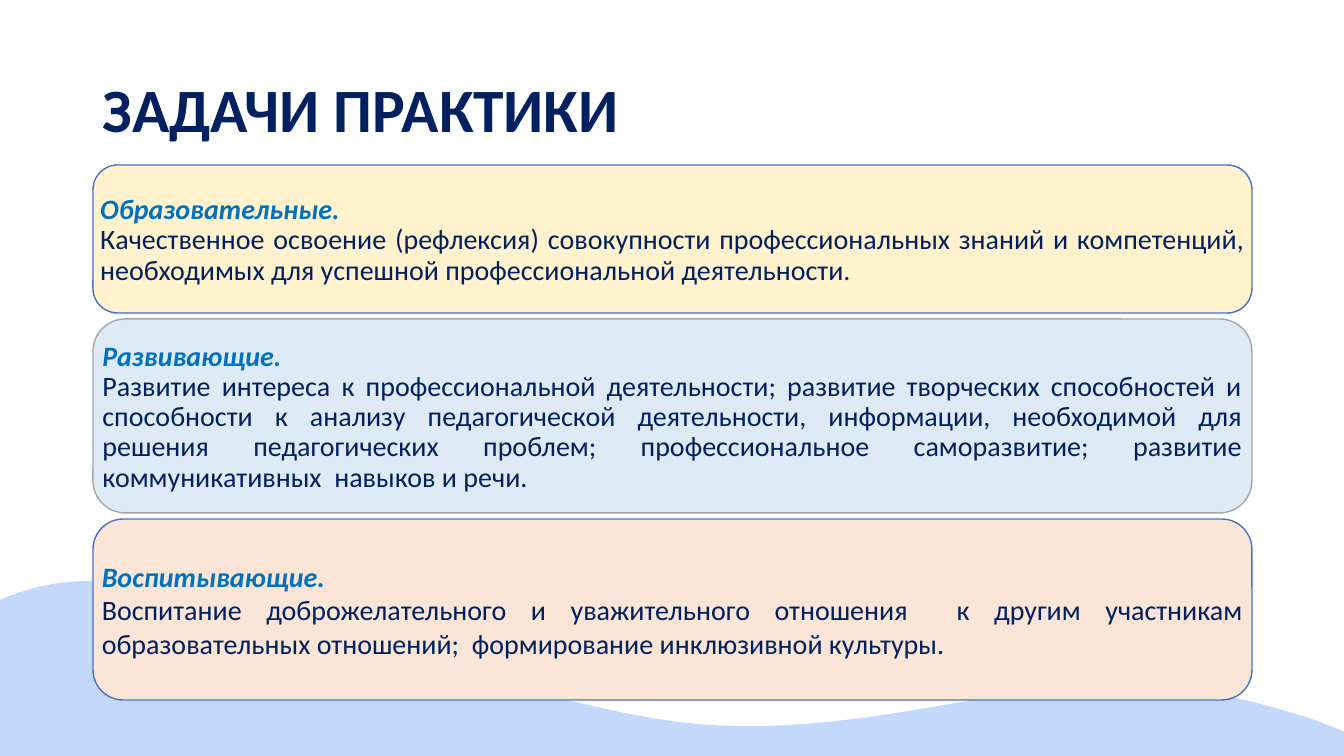
from dataclasses import dataclass

from pptx import Presentation
from pptx.dml.color import RGBColor
from pptx.enum.shapes import MSO_SHAPE
from pptx.enum.text import MSO_ANCHOR, PP_ALIGN
from pptx.util import Emu, Pt

EMU_PER_PX = 914400 / 100.8
WIDTH, HEIGHT = 1344, 756


def px(n):
    return Emu(round(n * EMU_PER_PX))


@dataclass(frozen=True)
class Theme:
    font: str = "Calibri"
    title_size: int = 44
    body_size: int = 20
    navy: str = "002060"
    accent: str = "0070C0"
    wave: str = "C4D8FB"
    blue_line: str = "4472C4"
    gray_line: str = "A5A5A5"
    cream: str = "FFF2CC"
    sky: str = "DEEBF7"
    peach: str = "FBE5D6"


def bezier(p0, p1, p2, p3, steps=24):
    """Points of a cubic curve after its start point."""
    for i in range(1, steps + 1):
        t = i / steps
        u = 1 - t
        yield tuple(u**3 * a + 3 * u * u * t * b + 3 * u * t * t * c + t**3 * d
                    for a, b, c, d in zip(p0, p1, p2, p3))


class SlideBuilder:
    def __init__(self, slide, theme):
        self.s = slide
        self.theme = theme

    def paint(self, sp, fill, line=None):
        sp.shadow.inherit = False
        sp.fill.solid()
        sp.fill.fore_color.rgb = RGBColor.from_string(fill)
        if line:
            sp.line.color.rgb = RGBColor.from_string(line)
            sp.line.width = Pt(1)
        else:
            sp.line.fill.background()

    def run(self, p, text, size, color, bold=False, italic=False):
        r = p.add_run()
        r.text = text
        r.font.name = self.theme.font
        r.font.size = Pt(size)
        r.font.bold = bold
        r.font.italic = italic
        r.font.color.rgb = RGBColor.from_string(color)

    def wave(self, start, curves):
        """Fill from a chain of cubic curves down to the slide's bottom edge."""
        points, here = [], start
        for c1, c2, end in curves:
            points += bezier(here, c1, c2, end)
            here = end
        points += [(WIDTH, HEIGHT), (0, HEIGHT)]
        fb = self.s.shapes.build_freeform(px(start[0]), px(start[1]))
        fb.add_line_segments([(px(x), px(y)) for x, y in points], close=True)
        self.paint(fb.convert_to_shape(), self.theme.wave)

    def title(self, text, left, top, width, height):
        box = self.s.shapes.add_textbox(px(left), px(top), px(width), px(height))
        tf = box.text_frame
        tf.word_wrap = True
        tf.vertical_anchor = MSO_ANCHOR.MIDDLE
        p = tf.paragraphs[0]
        p.line_spacing = 0.9
        self.run(p, text, self.theme.title_size, self.theme.navy, bold=True)

    def card(self, left, top, width, height, fill, line, heading, body, spacing):
        sp = self.s.shapes.add_shape(MSO_SHAPE.ROUNDED_RECTANGLE,
                                     px(left), px(top), px(width), px(height))
        self.paint(sp, fill, line)
        tf = sp.text_frame
        tf.word_wrap = True
        tf.vertical_anchor = MSO_ANCHOR.MIDDLE
        # The rounded corners already inset the text.
        tf.margin_left = tf.margin_right = 0
        tf.margin_top = tf.margin_bottom = 0
        size = self.theme.body_size
        p = tf.paragraphs[0]
        p.alignment = PP_ALIGN.JUSTIFY
        self.run(p, heading, size, self.theme.accent, bold=True, italic=True)
        p = tf.add_paragraph()
        p.alignment = PP_ALIGN.JUSTIFY
        p.line_spacing = spacing
        self.run(p, body, size, self.theme.navy)


def main():
    prs = Presentation()
    prs.slide_width, prs.slide_height = px(WIDTH), px(HEIGHT)
    theme = Theme()
    slide = SlideBuilder(prs.slides.add_slide(prs.slide_layouts[6]), theme)

    slide.wave((0, 600), [
        ((25, 589), (52, 582), (84, 581)),
        ((214, 581), (506, 700), (678, 722)),
        ((850, 744), (1033, 673), (1141, 682)),
        ((1203, 688), (1298, 710), (1344, 732)),
    ])

    left, width, gap = 93, 1159, 6
    slide.title("ЗАДАЧИ ПРАКТИКИ", left, 40, width, 146)

    cards = [
        (148, theme.cream, theme.blue_line, "Образовательные.",
         "Качественное освоение (рефлексия) совокупности профессиональных "
         "знаний и компетенций, необходимых для успешной профессиональной "
         "деятельности.", 0.9),
        (194, theme.sky, theme.gray_line, "Развивающие.",
         "Развитие интереса к профессиональной деятельности; развитие "
         "творческих способностей и способности к анализу педагогической "
         "деятельности, информации, необходимой для решения педагогических "
         "проблем; профессиональное саморазвитие; развитие "
         "коммуникативных  навыков и речи.", 0.9),
        (181, theme.peach, theme.blue_line, "Воспитывающие.",
         "Воспитание доброжелательного и уважительного отношения  к другим "
         "участникам образовательных отношений;  формирование инклюзивной "
         "культуры.", 1.0),
    ]
    top = 165
    for height, *content in cards:
        slide.card(left, top, width, height, *content)
        top += height + gap

    prs.save("out.pptx")


if __name__ == "__main__":
    main()
